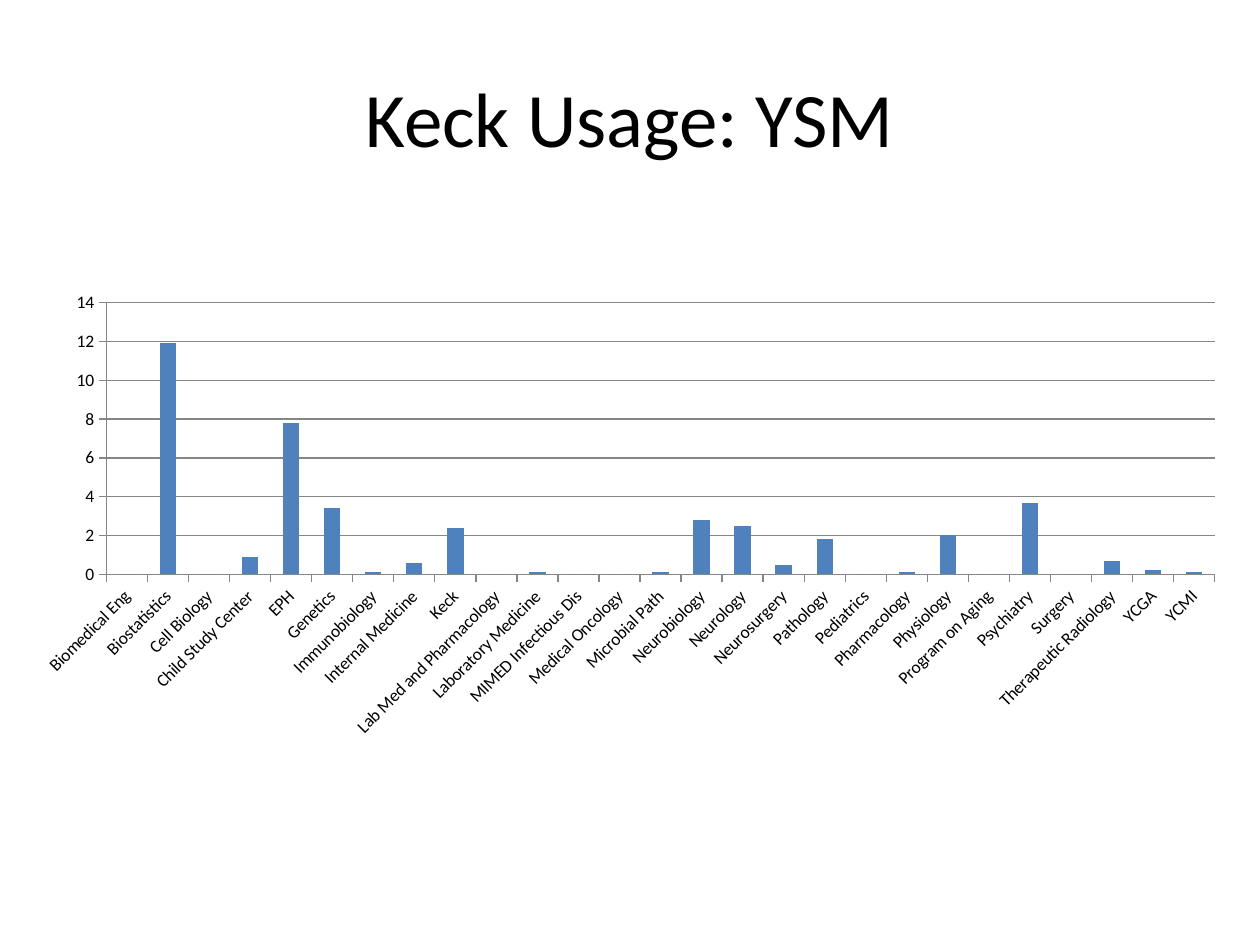
from pptx import Presentation
from pptx.chart.data import CategoryChartData
from pptx.dml.color import RGBColor
from pptx.enum.chart import XL_CHART_TYPE, XL_TICK_MARK
from pptx.enum.text import MSO_ANCHOR, PP_ALIGN
from pptx.util import Cm, Pt

COLUMNS = XL_CHART_TYPE.COLUMN_CLUSTERED
OUTSIDE, NO_TICK = XL_TICK_MARK.OUTSIDE, XL_TICK_MARK.NONE
MIDDLE, CENTER = MSO_ANCHOR.MIDDLE, PP_ALIGN.CENTER

BLACK = RGBColor(0x00, 0x00, 0x00)
GRAY = RGBColor(0x86, 0x86, 0x86)
BLUE = RGBColor(0x4F, 0x81, 0xBD)
FONT = "Calibri"
TITLE_ONLY = 5

USAGE = {
    "Biomedical Eng": 0,
    "Biostatistics": 11.9,
    "Cell Biology": 0,
    "Child Study Center": 0.9,
    "EPH": 7.8,
    "Genetics": 3.4,
    "Immunobiology": 0.1,
    "Internal Medicine": 0.6,
    "Keck": 2.4,
    "Lab Med and Pharmacology": 0,
    "Laboratory Medicine": 0.1,
    "MIMED Infectious Dis": 0,
    "Medical Oncology": 0,
    "Microbial Path": 0.1,
    "Neurobiology": 2.8,
    "Neurology": 2.5,
    "Neurosurgery": 0.5,
    "Pathology": 1.8,
    "Pediatrics": 0,
    "Pharmacology": 0.1,
    "Physiology": 2,
    "Program on Aging": 0,
    "Psychiatry": 3.7,
    "Surgery": 0,
    "Therapeutic Radiology": 0.7,
    "YCGA": 0.2,
    "YCMI": 0.1,
}


def set_font(font, size):
    font.name, font.size, font.bold = FONT, Pt(size), False
    font.color.rgb = BLACK


def place_title(slide, text, left, top, width, height):
    title = slide.shapes.title
    title.left, title.top, title.width, title.height = left, top, width, height
    tf = title.text_frame
    tf.text = text
    tf.vertical_anchor = MIDDLE
    p = tf.paragraphs[0]
    p.alignment = CENTER
    set_font(p.font, 44)


def style_line(line):
    line.color.rgb = GRAY
    line.width = Pt(0.75)


def add_usage_chart(slide, left, top, width, height):
    data = CategoryChartData()
    data.categories = USAGE.keys()
    data.add_series("Series 1", USAGE.values())
    chart = slide.shapes.add_chart(COLUMNS, left, top, width, height, data).chart
    chart.has_legend = False
    chart.has_title = False
    set_font(chart.font, 10)

    plot = chart.plots[0]
    plot.gap_width = 150
    plot.vary_by_categories = False
    fill = plot.series[0].format.fill
    fill.solid()
    fill.fore_color.rgb = BLUE

    for axis in (chart.category_axis, chart.value_axis):
        axis.major_tick_mark = OUTSIDE
        axis.minor_tick_mark = NO_TICK
        style_line(axis.format.line)
        set_font(axis.tick_labels.font, 10)

    # Slant the department names by 45 degrees
    body = chart.category_axis._element.txPr.bodyPr
    body.set("rot", "-2700000")
    body.set("vert", "horz")

    axis = chart.value_axis
    axis.minimum_scale, axis.maximum_scale, axis.major_unit = 0, 14, 2
    axis.has_major_gridlines = True
    style_line(axis.major_gridlines.format.line)
    axis.tick_labels.number_format = "General"
    axis.tick_labels.number_format_is_linked = False


def main():
    prs = Presentation()
    prs.slide_width, prs.slide_height = Cm(25.4), Cm(19.05)
    slide = prs.slides.add_slide(prs.slide_layouts[TITLE_ONLY])
    place_title(slide, "Keck Usage: YSM", Cm(1.27), Cm(0.76), Cm(22.86), Cm(3.18))
    add_usage_chart(slide, Cm(0.42), Cm(5.72), Cm(24.56), Cm(9.32))
    prs.save("out.pptx")


if __name__ == "__main__":
    main()
